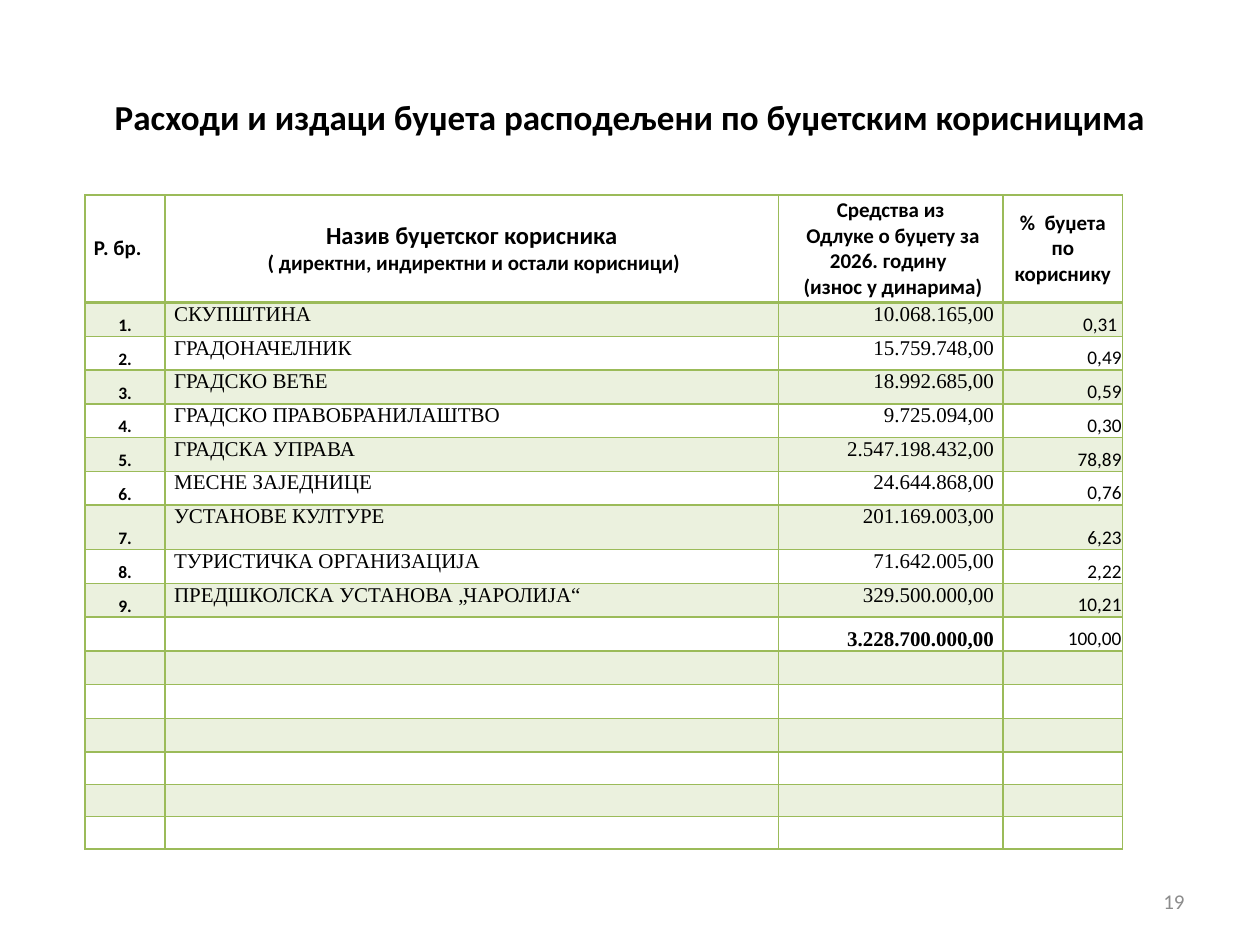
import pptx
import pptx.dml.color
import pptx.enum.text
import pptx.oxml.ns
import pptx.util
from lxml import etree

Cm, Pt = pptx.util.Cm, pptx.util.Pt
RGB = pptx.dml.color.RGBColor.from_string
AL = pptx.enum.text.PP_ALIGN
ANC = pptx.enum.text.MSO_ANCHOR
qn = pptx.oxml.ns.qn
COLORS = {"text": "000000", "grid": "9BBB59", "band": "EBF1DE", "number": "8C8C8C"}
SANS, SERIF = "Calibri", "Times New Roman"


def add_run(p, text, size, font=SANS, bold=False, color="text"):
    r = p.add_run()
    r.text = text
    r.font.size, r.font.name, r.font.bold = Pt(size), font, bold
    r.font.color.rgb = RGB(COLORS[color])


def set_borders(cell, bottom=1, top=1):
    tc_pr = cell._tc.get_or_add_tcPr()
    for side, width in (("L", 1), ("R", 1), ("T", top), ("B", bottom)):
        ln = etree.SubElement(tc_pr, qn(f"a:ln{side}"), w=str(Pt(width)))
        fill = etree.SubElement(ln, qn("a:solidFill"))
        etree.SubElement(fill, qn("a:srgbClr"), val=COLORS["grid"])


prs = pptx.Presentation()
prs.slide_width, prs.slide_height = Cm(25.4), Cm(19.05)
s = prs.slides.add_slide(prs.slide_layouts[6])

# Title and slide number
for box, text, size, bold, color, align in (
    ((1.27, 0.76, 22.86, 3.18),
     "Расходи и издаци буџета расподељени по буџетским корисницима",
     20, True, "text", AL.CENTER),
    ((18.2, 17.66, 5.93, 1.01), "19", 12, False, "number", AL.RIGHT),
):
    tf = s.shapes.add_textbox(*map(Cm, box)).text_frame
    tf.word_wrap = True
    tf.vertical_anchor = ANC.MIDDLE
    tf.paragraphs[0].alignment = align
    add_run(tf.paragraphs[0], text, size, bold=bold, color=color)

# Table contents
headers = [
    (AL.LEFT, [("Р. бр.", 12)]),
    (AL.CENTER, [("Назив буџетског корисника", 14),
                 (" ( директни, индиректни и остали корисници)", 12)]),
    (AL.CENTER, [("Средства из", 12), (" Одлуке о буџету за 2026. годину ", 12),
                 (" (износ у динарима)", 12)]),
    (AL.CENTER, [("%  буџета по кориснику", 12)]),
]
users = [
    ("СКУПШТИНА", "10.068.165,00", "0,31 "),
    ("ГРАДОНАЧЕЛНИК ", "15.759.748,00", "0,49"),
    ("ГРАДСКО ВЕЋЕ", "18.992.685,00", "0,59"),
    ("ГРАДСКО ПРАВОБРАНИЛАШТВО", "9.725.094,00", "0,30"),
    ("ГРАДСКА УПРАВА", "2.547.198.432,00", "78,89"),
    ("МЕСНЕ ЗАЈЕДНИЦЕ ", "24.644.868,00", "0,76"),
    ("УСТАНОВЕ КУЛТУРЕ", "201.169.003,00", "6,23"),
    ("ТУРИСТИЧКА ОРГАНИЗАЦИЈА ", "71.642.005,00", "2,22"),
    ("ПРЕДШКОЛСКА УСТАНОВА „ЧАРОЛИЈА“", "329.500.000,00", "10,21"),
]
rows = [(f"{i}.", *user) for i, user in enumerate(users, 1)]
rows.append(("", "", "3.228.700.000,00", "100,00"))
total_row = len(rows)
rows += [("",) * 4] * 6

col_widths = [1.62, 12.36, 4.53, 2.41]
row_heights = [2.17] + [0.68] * 6 + [0.9] + [0.68] * 6 + [0.65] * 3
# Per column: alignment, anchor, size, font, bold
col_styles = [
    (AL.CENTER, ANC.BOTTOM, 10, SANS, True),
    (AL.JUSTIFY, ANC.TOP, 12, SERIF, False),
    (AL.RIGHT, ANC.TOP, 12, SERIF, False),
    (AL.RIGHT, ANC.BOTTOM, 11, SANS, False),
]

table = s.shapes.add_table(len(row_heights), len(col_widths), Cm(1.71), Cm(3.93),
                           Cm(sum(col_widths)), Cm(sum(row_heights))).table
table.first_row = table.horz_banding = False
for col, width in zip(table.columns, col_widths):
    col.width = Cm(width)
for row, height in zip(table.rows, row_heights):
    row.height = Cm(height)

# Header row
for c, (align, lines) in enumerate(headers):
    cell = table.cell(0, c)
    cell.margin_left = cell.margin_right = Cm(0.18)
    cell.margin_top = cell.margin_bottom = 0
    cell.vertical_anchor = ANC.MIDDLE
    set_borders(cell, bottom=2)
    cell.fill.background()
    tf = cell.text_frame
    for i, (text, size) in enumerate(lines):
        p = tf.add_paragraph() if i else tf.paragraphs[0]
        p.alignment = align
        add_run(p, text, size, bold=True)

# Body rows
for r, values in enumerate(rows, 1):
    for c, (text, style) in enumerate(zip(values, col_styles)):
        align, anchor, size, font, bold = style
        is_total = r == total_row and c == 2
        cell = table.cell(r, c)
        cell.margin_left = cell.margin_right = Cm(0.02 if c == 3 else 0.18)
        cell.margin_top = Cm(0.02 if c == 3 else 0)
        cell.margin_bottom = 0
        cell.vertical_anchor = ANC.BOTTOM if is_total else anchor
        set_borders(cell, top=2 if r == 1 else 1)
        if r % 2:
            cell.fill.solid()
            cell.fill.fore_color.rgb = RGB(COLORS["band"])
        else:
            cell.fill.background()
        p = cell.text_frame.paragraphs[0]
        p.alignment = align
        if text:
            add_run(p, text, size, font, bold or is_total)
        else:
            etree.SubElement(p._p, qn("a:endParaRPr"), sz=str(size * 100))

prs.save("out.pptx")
